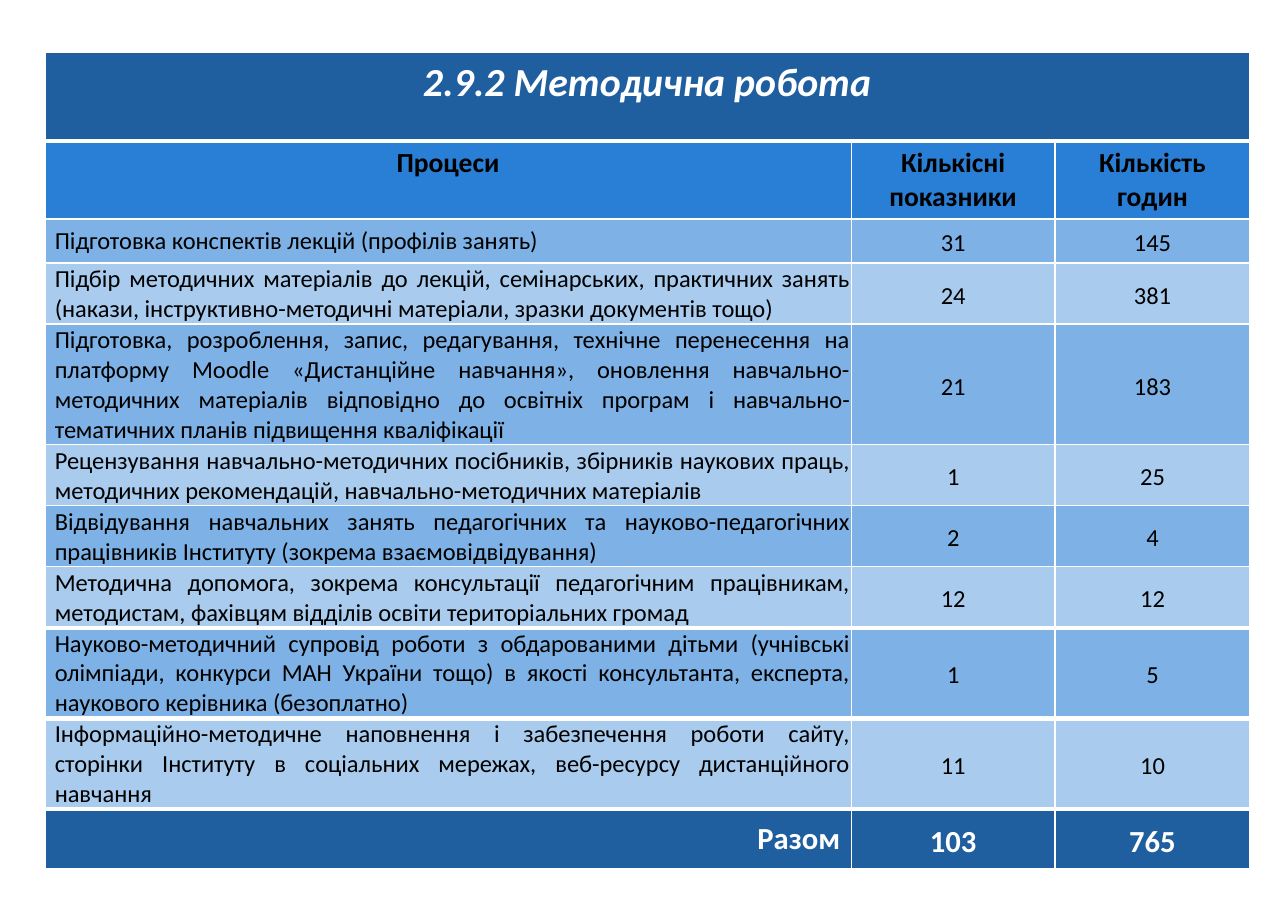
import pptx
import pptx.dml.color
import pptx.enum.text
import pptx.oxml
import pptx.oxml.ns
import pptx.util

Pt = pptx.util.Pt
ALIGN = pptx.enum.text.PP_ALIGN
ANCHOR = pptx.enum.text.MSO_ANCHOR
COLORS = {"dark": "1F5FA0", "header": "297FD5", "odd": "7EB2E6",
          "even": "A9CCEE", "white": "FFFFFF", "black": "000000"}

PROCESSES = [
    ("Підготовка конспектів лекцій (профілів занять)", "31", "145"),
    ("Підбір методичних матеріалів до лекцій, семінарських, практичних занять "
     "(накази, інструктивно-методичні матеріали, зразки документів тощо)", "24", "381"),
    ("Підготовка, розроблення, запис, редагування, технічне перенесення на платформу "
     "Moodle «Дистанційне навчання», оновлення навчально-методичних матеріалів відповідно "
     "до освітніх програм і навчально-тематичних планів підвищення кваліфікації", "21", "183"),
    ("Рецензування навчально-методичних посібників, збірників наукових праць, "
     "методичних рекомендацій, навчально-методичних матеріалів", "1", "25"),
    ("Відвідування навчальних занять педагогічних та науково-педагогічних працівників "
     "Інституту (зокрема взаємовідвідування)", "2", "4"),
    ("Методична допомога, зокрема консультації педагогічним працівникам, методистам, "
     "фахівцям відділів освіти територіальних громад", "12", "12"),
    ("Науково-методичний супровід роботи з обдарованими дітьми (учнівські олімпіади, "
     "конкурси МАН України тощо) в якості консультанта, експерта, наукового керівника "
     "(безоплатно)", "1", "5"),
    ("Інформаційно-методичне наповнення і забезпечення роботи сайту, сторінки Інституту "
     "в соціальних мережах, веб-ресурсу дистанційного навчання", "11", "10"),
]
ROWS = [("2.9.2 Методична робота", "", ""),
        ("Процеси", "Кількісні показники", "Кількість годин"),
        *PROCESSES,
        ("Разом", "103", "765")]
TITLE, HEADER, TOTAL = 0, 1, len(ROWS) - 1
COLUMN_WIDTHS = [527, 133.2, 127.4]
ROW_HEIGHTS = [57.6, 51, 28.8, 39.6, 78.8, 39.6, 39.6, 39.6, 59.2, 59.2, 39]
THICK_BELOW = {TITLE, 7, 8, 9}  # rows followed by a 3 pt rule


def add_borders(cell, row):
    properties = cell._tc.get_or_add_tcPr()
    top = 3 if row - 1 in THICK_BELOW else 1
    bottom = 3 if row in THICK_BELOW else 1
    for side, width in (("L", 1), ("R", 1), ("T", top), ("B", bottom)):
        properties.append(pptx.oxml.parse_xml(
            f'<a:ln{side} {pptx.oxml.ns.nsdecls("a")} w="{Pt(width)}"><a:solidFill>'
            f'<a:srgbClr val="{COLORS["white"]}"/></a:solidFill></a:ln{side}>'))


def write_cell(cell, text, fill, size, color, bold, align):
    cell.fill.solid()
    cell.fill.fore_color.rgb = pptx.dml.color.RGBColor.from_string(COLORS[fill])
    para = cell.text_frame.paragraphs[0]
    para.alignment = align
    span = para.add_run()
    span.text = text
    span.font.name = "Calibri"
    span.font.size = Pt(size)
    span.font.bold = bold
    span.font.color.rgb = pptx.dml.color.RGBColor.from_string(COLORS[color])
    return para, span


# Page
deck = pptx.Presentation()
deck.slide_width, deck.slide_height = Pt(841.68), Pt(595.44)
page = deck.slides.add_slide(deck.slide_layouts[6])

# Table grid
table = page.shapes.add_table(len(ROWS), 3, Pt(29.3), Pt(34.4),
                              Pt(sum(COLUMN_WIDTHS)), Pt(sum(ROW_HEIGHTS))).table
for column, width in zip(table.columns, COLUMN_WIDTHS):
    column.width = Pt(width)
for line, height in zip(table.rows, ROW_HEIGHTS):
    line.height = Pt(height)
for row in range(len(ROWS)):
    for column in range(3):
        add_borders(table.cell(row, column), row)

# Title row across all columns
table.cell(TITLE, 0).merge(table.cell(TITLE, 2))
para, span = write_cell(table.cell(TITLE, 0), ROWS[TITLE][0], "dark", 26, "white", True, ALIGN.CENTER)
span.font.italic = True

# Column headings
for column, heading in enumerate(ROWS[HEADER]):
    cell = table.cell(HEADER, column)
    cell.margin_left = cell.margin_right = Pt(7.9)
    write_cell(cell, heading, "header", 18, "black", True, ALIGN.CENTER)

# Processes and total
for row in range(HEADER + 1, len(ROWS)):
    is_total = row == TOTAL
    fill = "dark" if is_total else ("odd", "even")[row % 2]
    style = (fill, 20, "white", True) if is_total else (fill, 16, "black", False)
    for column, text in enumerate(ROWS[row]):
        cell = table.cell(row, column)
        cell.vertical_anchor = ANCHOR.MIDDLE
        if column:
            cell.margin_left = cell.margin_right = Pt(5)
            cell.margin_top = cell.margin_bottom = 0
            para, span = write_cell(cell, text, *style, ALIGN.CENTER)
            para.line_spacing = 1.15
        elif is_total:
            write_cell(cell, text, *style, ALIGN.RIGHT)
        else:
            cell.margin_left = cell.margin_right = cell.margin_top = Pt(0.7)
            cell.margin_bottom = 0
            para, span = write_cell(cell, text, *style, ALIGN.JUSTIFY)
            para._p.get_or_add_pPr().set("marL", str(Pt(5.8)))

deck.save("out.pptx")
